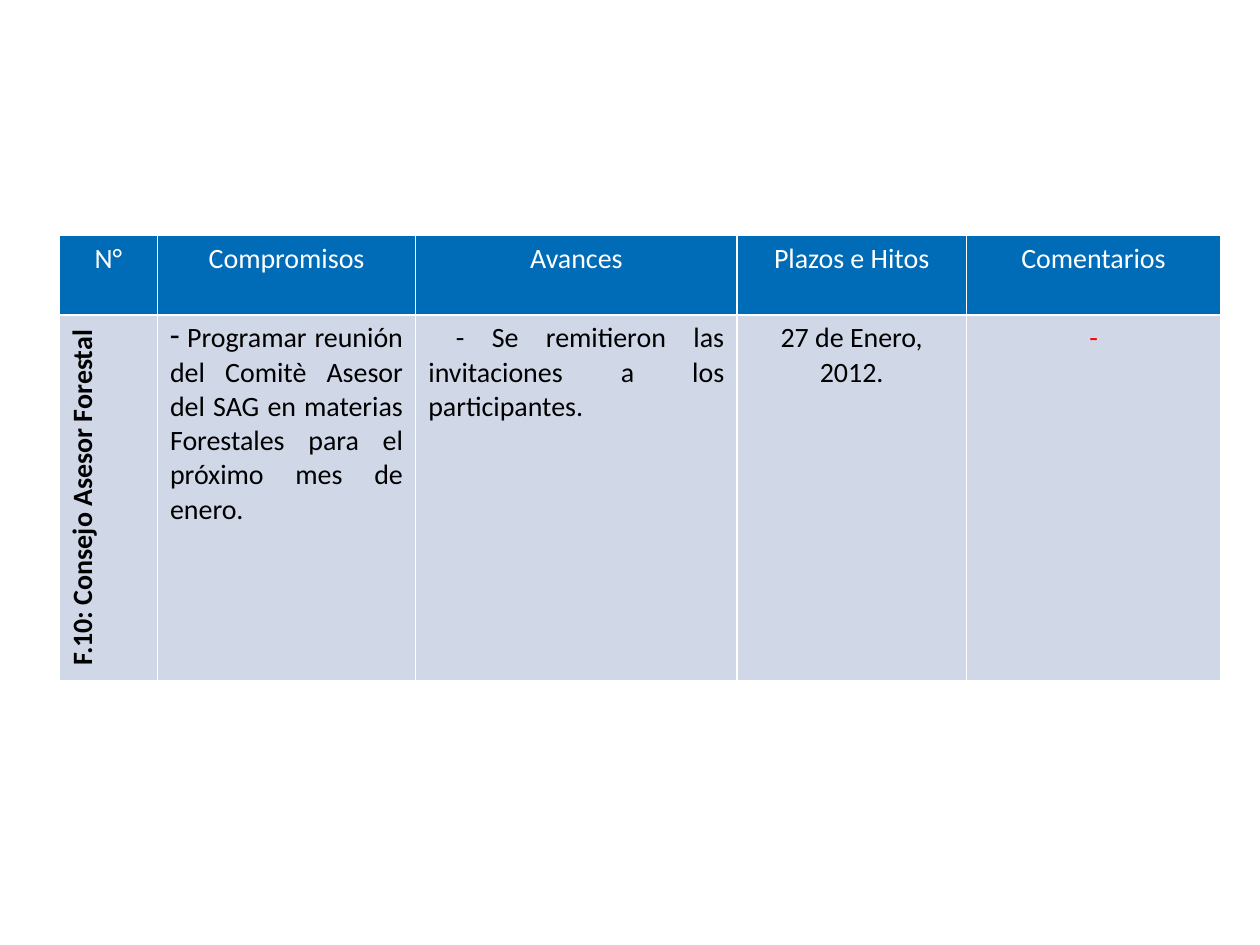
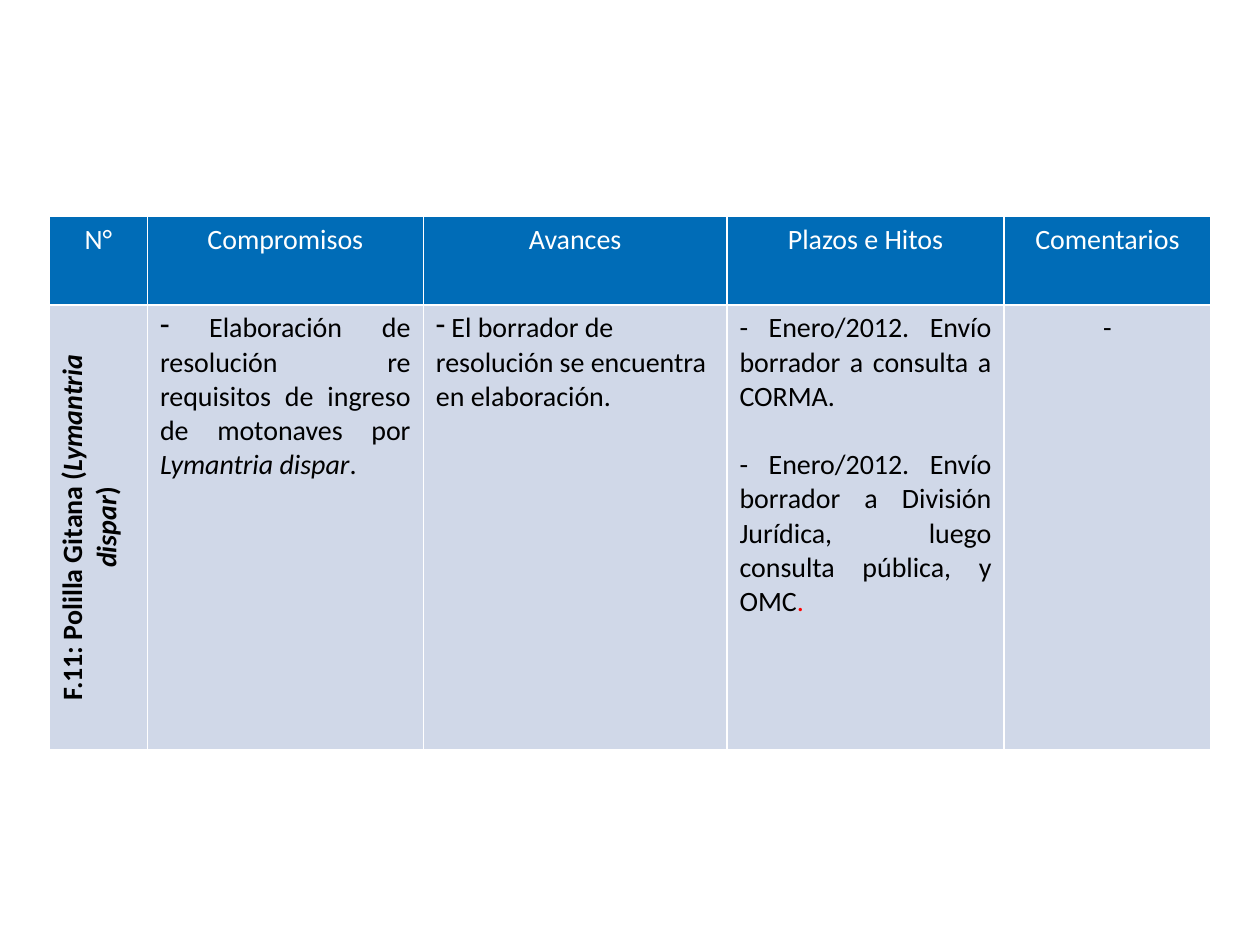
from dataclasses import dataclass

from lxml import etree
from pptx import Presentation
from pptx import util as u
from pptx.dml.color import RGBColor
from pptx.enum import text
from pptx.oxml import ns

WHITE = RGBColor(0xFF, 0xFF, 0xFF)
BLACK = RGBColor(0x00, 0x00, 0x00)
RED = RGBColor(0xFF, 0x00, 0x00)
HEADER_BLUE = RGBColor(0x00, 0x6C, 0xB7)
BODY_BLUE = RGBColor(0xD0, 0xD8, 0xE8)

FONT_NAME = "Calibri"
FONT_SIZE = u.Pt(16)
PARAGRAPH_GAP = u.Pt(19.5)
BORDER_WIDTH = u.Pt(1)

LEFT = text.PP_ALIGN.LEFT
CENTER = text.PP_ALIGN.CENTER
JUSTIFY = text.PP_ALIGN.JUSTIFY

HEADERS = ["N°", "Compromisos", "Avances", "Plazos e Hitos", "Comentarios"]


@dataclass
class Run:
    text: str
    color: RGBColor = BLACK
    bold: bool = False
    italic: bool = False


@dataclass
class Content:
    paragraphs: list
    alignment: int = CENTER
    bullet: bool = False
    vertical: bool = False


def add_dash_bullet(paragraph):
    properties = paragraph._p.get_or_add_pPr()
    properties.set("marL", "0")
    properties.set("indent", "0")
    bullet = etree.SubElement(properties, ns.qn("a:buChar"))
    bullet.set("char", "-")


def add_borders(cell):
    properties = cell._tc.get_or_add_tcPr()
    for side in ("L", "R", "T", "B"):
        line = etree.SubElement(properties, ns.qn(f"a:ln{side}"), w=str(BORDER_WIDTH))
        fill = etree.SubElement(line, ns.qn("a:solidFill"))
        etree.SubElement(fill, ns.qn("a:srgbClr"), val=str(WHITE))


def write_paragraph(paragraph, runs, content):
    paragraph.alignment = content.alignment
    if content.bullet:
        add_dash_bullet(paragraph)
    for item in runs:
        run = paragraph.add_run()
        run.text = item.text
        run.font.name = FONT_NAME
        run.font.size = FONT_SIZE
        run.font.bold = item.bold
        run.font.italic = item.italic
        run.font.color.rgb = item.color


def fill_cell(cell, content, color):
    add_borders(cell)
    cell.fill.solid()
    cell.fill.fore_color.rgb = color
    if content.vertical:
        cell._tc.get_or_add_tcPr().set("vert", "vert270")
    frame = cell.text_frame
    for index, runs in enumerate(content.paragraphs):
        paragraph = frame.add_paragraph() if index else frame.paragraphs[0]
        if index:
            paragraph.space_before = PARAGRAPH_GAP
        write_paragraph(paragraph, runs, content)


def add_commitment_slide(presentation, left, top, widths, heights, contents):
    slide = presentation.slides.add_slide(presentation.slide_layouts[6])
    frame = slide.shapes.add_table(
        2, len(HEADERS), u.Inches(left), u.Inches(top),
        u.Inches(sum(widths)), u.Inches(sum(heights)))
    table = frame.table
    table.first_row = False
    table.horz_banding = False
    for column, width in zip(table.columns, widths):
        column.width = u.Inches(width)
    for row, height in zip(table.rows, heights):
        row.height = u.Inches(height)
    for index, (header, content) in enumerate(zip(HEADERS, contents)):
        fill_cell(table.cell(0, index), Content([[Run(header, WHITE)]]), HEADER_BLUE)
        fill_cell(table.cell(1, index), content, BODY_BLUE)


def main():
    presentation = Presentation()
    presentation.slide_width = u.Inches(10)
    presentation.slide_height = u.Inches(7.5)

    forest_council = [
        Content([[Run("F.10: Consejo Asesor Forestal", bold=True)]], vertical=True),
        Content([[Run(" Programar reunión del Comitè Asesor del SAG en materias "
                      "Forestales para el próximo mes de enero.")]],
                JUSTIFY, bullet=True),
        Content([[Run(" - Se remitieron las invitaciones a los participantes.")]], JUSTIFY),
        Content([[Run("27 de Enero, 2012.")]]),
        Content([[Run("-", RED)]]),
    ]
    add_commitment_slide(presentation, 0.47, 1.87, [0.78, 2.05, 2.55, 1.82, 2.02],
                         [0.63, 2.9], forest_council)

    gypsy_moth = [
        Content([[Run("F.11: Polilla Gitana (", bold=True),
                  Run("Lymantria dispar", bold=True, italic=True),
                  Run(")", bold=True)]], vertical=True),
        Content([[Run(" Elaboración de resolución re requisitos de ingreso "
                      "de motonaves por "),
                  Run("Lymantria dispar", italic=True),
                  Run(".")]], JUSTIFY, bullet=True),
        Content([[Run(" El borrador de resolución se encuentra en elaboración.")]],
                LEFT, bullet=True),
        Content([[Run("- Enero/2012. Envío borrador a consulta a CORMA.")],
                 [Run("- Enero/2012. Envío borrador a División Jurídica, "
                      "luego consulta pública, y OMC"),
                  Run(".", RED)]], JUSTIFY),
        Content([[Run("-")]]),
    ]
    add_commitment_slide(presentation, 0.39, 1.72, [0.78, 2.19, 2.41, 2.2, 1.64],
                         [0.7, 3.1], gypsy_moth)

    presentation.save("out.pptx")


if __name__ == "__main__":
    main()
